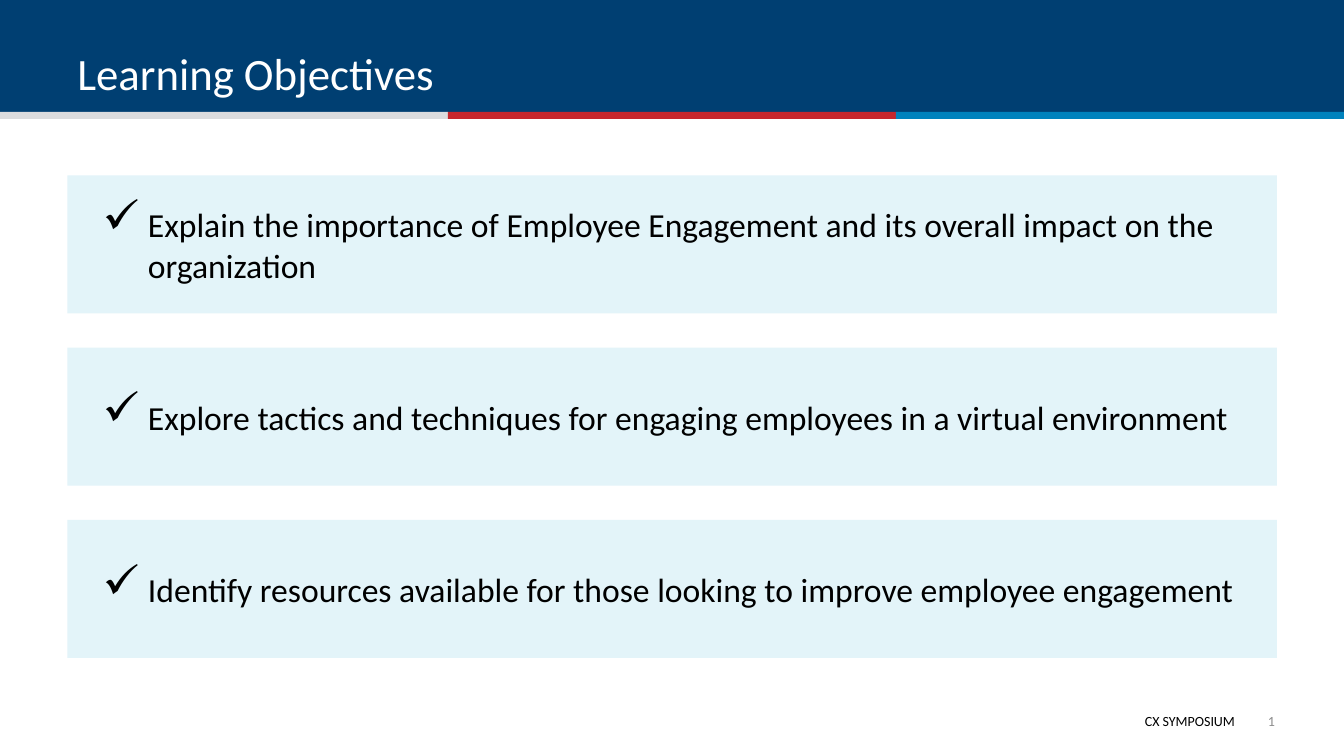
import pptx
import pptx.dml.color
import pptx.enum.shapes
import pptx.enum.text
import pptx.oxml.ns
import pptx.util
from lxml import etree

Cm = pptx.util.Cm
RGBColor = pptx.dml.color.RGBColor
PP_ALIGN = pptx.enum.text.PP_ALIGN
MSO_ANCHOR = pptx.enum.text.MSO_ANCHOR

NAVY = RGBColor(0x00, 0x3F, 0x72)
SILVER = RGBColor(0xDB, 0xDC, 0xDE)
RED = RGBColor(0xC6, 0x26, 0x2D)
BLUE = RGBColor(0x00, 0x82, 0xBD)
PALE_BLUE = RGBColor(0xE3, 0xF4, 0xF9)
GRAY = RGBColor(0x8C, 0x8C, 0x8C)
BLACK = RGBColor(0x00, 0x00, 0x00)
WHITE = RGBColor(0xFF, 0xFF, 0xFF)

SLIDE_WIDTH = 33.87
MARGIN = 1.7
CONTENT_WIDTH = 30.48

OBJECTIVES = [
    "Explain the importance of Employee Engagement and its overall impact on the organization",
    "Explore tactics and techniques for engaging employees in a virtual environment",
    "Identify resources available for those looking to improve employee engagement",
]


def add_bar(left, top, width, height, color):
    sp = s.shapes.add_shape(pptx.enum.shapes.MSO_SHAPE.RECTANGLE,
                            Cm(left), Cm(top), Cm(width), Cm(height))
    sp.shadow.inherit = False
    sp.fill.solid()
    sp.fill.fore_color.rgb = color
    sp.line.fill.background()
    return sp


def write(sp, text, size, color, align=PP_ALIGN.LEFT, anchor=MSO_ANCHOR.MIDDLE):
    """Put one styled paragraph in a shape and return the paragraph."""
    tf = sp.text_frame
    tf.word_wrap = True
    tf.vertical_anchor = anchor
    p = tf.paragraphs[0]
    p.alignment = align
    r = p.add_run()
    r.text = text
    r.font.name = "Calibri"
    r.font.size = pptx.util.Pt(size)
    r.font.color.rgb = color
    return p


prs = pptx.Presentation()
prs.slide_width = Cm(SLIDE_WIDTH)
prs.slide_height = Cm(19.05)
s = prs.slides.add_slide(prs.slide_layouts[6])

# Header band and its three-colour stripe
add_bar(0, 0, SLIDE_WIDTH, 2.9, NAVY)
stripe_width = SLIDE_WIDTH / 3
for i, color in enumerate([SILVER, RED, BLUE]):
    add_bar(i * stripe_width, 2.82, stripe_width, 0.18, color)

title = s.shapes.add_textbox(Cm(MARGIN), Cm(0.36), Cm(CONTENT_WIDTH), Cm(2.26))
write(title, "Learning Objectives", 32, WHITE, anchor=MSO_ANCHOR.BOTTOM)

# Objective panels with check-mark bullets
for i, objective in enumerate(OBJECTIVES):
    panel = add_bar(MARGIN, 4.42 + i * 4.34, CONTENT_WIDTH, 3.48, PALE_BLUE)
    p = write(panel, objective, 24, BLACK)
    pPr = p._p.get_or_add_pPr()
    pPr.set("marL", str(Cm(1.78)))
    pPr.set("indent", str(Cm(-1.14)))
    etree.SubElement(pPr, pptx.oxml.ns.qn("a:buSzPct")).set("val", "140000")
    etree.SubElement(pPr, pptx.oxml.ns.qn("a:buChar")).set("char", "✓")

# Footer
footer = s.shapes.add_textbox(Cm(14), Cm(17.83), Cm(17.37), Cm(0.69))
write(footer, "CX SYMPOSIUM", 10, BLACK, PP_ALIGN.RIGHT, MSO_ANCHOR.TOP)

page_number = s.shapes.add_textbox(Cm(31.22), Cm(17.65), Cm(0.91), Cm(1.02))
p = write(page_number, "1", 10, GRAY, PP_ALIGN.RIGHT)
p.space_after = pptx.util.Pt(6)
tf = page_number.text_frame
tf.margin_left = tf.margin_right = tf.margin_top = tf.margin_bottom = 0

prs.save("out.pptx")
